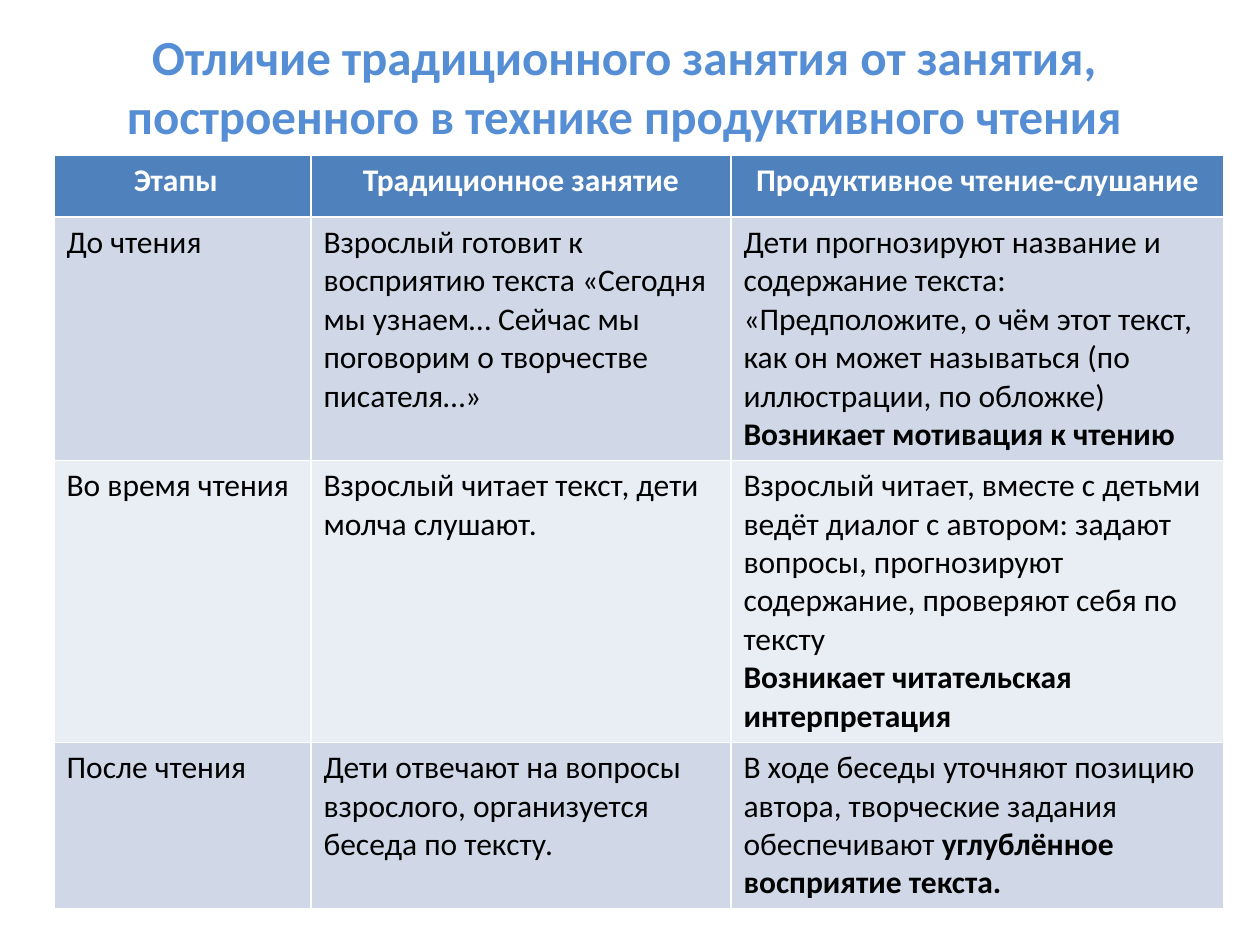
from pptx import Presentation
from pptx.dml.color import RGBColor
from pptx.enum.text import MSO_ANCHOR, PP_ALIGN
from pptx.util import Emu, Pt

PX_PER_INCH = 126
FONT = "Calibri"
TITLE_BLUE = RGBColor(0x55, 0x8E, 0xD5)
HEADER_BLUE = RGBColor(0x4F, 0x81, 0xBD)
BAND_DARK = RGBColor(0xD0, 0xD8, 0xE8)
BAND_LIGHT = RGBColor(0xE9, 0xED, 0xF4)
WHITE = RGBColor(0xFF, 0xFF, 0xFF)
BLACK = RGBColor(0x00, 0x00, 0x00)


def px(length):
    return Emu(round(length * 914400 / PX_PER_INCH))


def style_font(font, size, color, bold):
    font.name = FONT
    font.size = Pt(size)
    font.color.rgb = color
    font.bold = bold


# Each cell is a list of paragraphs; a paragraph is (plain text, bold text)
STAGES = [
    [[("", "Этапы")],
     [("", "Традиционное занятие")],
     [("", "Продуктивное чтение-слушание")]],
    [[("До чтения", "")],
     [("Взрослый готовит к восприятию текста «Сегодня мы узнаем… "
       "Сейчас мы поговорим о творчестве писателя…»", "")],
     [("Дети прогнозируют название и содержание текста: «Предположите, о чём "
       "этот текст, как он может называться (по иллюстрации, по обложке)", ""),
      ("", "Возникает мотивация к чтению")]],
    [[("Во время чтения", "")],
     [("Взрослый читает текст, дети молча слушают.", "")],
     [("Взрослый читает, вместе с детьми ведёт диалог с автором: задают "
       "вопросы, прогнозируют содержание, проверяют себя по тексту", ""),
      ("", "Возникает читательская интерпретация")]],
    [[("После чтения", "")],
     [("Дети отвечают на вопросы взрослого, организуется беседа по тексту.", "")],
     [("В ходе беседы уточняют позицию автора, творческие задания обеспечивают",
       " углублённое восприятие текста.")]],
]
COLUMN_WIDTHS = [257, 420, 493]
ROW_HEIGHTS = [62, 243, 282, 166]

prs = Presentation()
prs.slide_width = px(1260)
prs.slide_height = px(945)
slide = prs.slides.add_slide(prs.slide_layouts[5])

heading = slide.shapes.title
heading.left, heading.top, heading.width, heading.height = px(44), px(16), px(1160), px(139)
heading.text_frame.text = ("Отличие традиционного занятия от занятия, "
                           "построенного в технике продуктивного чтения")
heading.text_frame.vertical_anchor = MSO_ANCHOR.MIDDLE
heading_line = heading.text_frame.paragraphs[0]
heading_line.alignment = PP_ALIGN.CENTER
style_font(heading_line.font, 28, TITLE_BLUE, True)

comparison = slide.shapes.add_table(
    len(ROW_HEIGHTS), len(COLUMN_WIDTHS), px(54), px(155),
    px(sum(COLUMN_WIDTHS)), px(sum(ROW_HEIGHTS))).table
for column, width in zip(comparison.columns, COLUMN_WIDTHS):
    column.width = px(width)
for row, height in zip(comparison.rows, ROW_HEIGHTS):
    row.height = px(height)

for r, stage in enumerate(STAGES):
    is_header = r == 0
    band = HEADER_BLUE if is_header else (BAND_LIGHT, BAND_DARK)[r % 2]
    for c, paragraphs in enumerate(stage):
        cell = comparison.cell(r, c)
        cell.fill.solid()
        cell.fill.fore_color.rgb = band
        for i, (plain, strong) in enumerate(paragraphs):
            frame = cell.text_frame
            paragraph = frame.add_paragraph() if i else frame.paragraphs[0]
            paragraph.alignment = PP_ALIGN.CENTER if is_header else PP_ALIGN.LEFT
            for text, bold in ((plain, False), (strong, True)):
                if text:
                    run = paragraph.add_run()
                    run.text = text
                    style_font(run.font, 18, WHITE if is_header else BLACK, bold)

# The first heading sits slightly left of the column's centre
comparison.cell(0, 0).margin_right = px(26)

prs.save("out.pptx")
